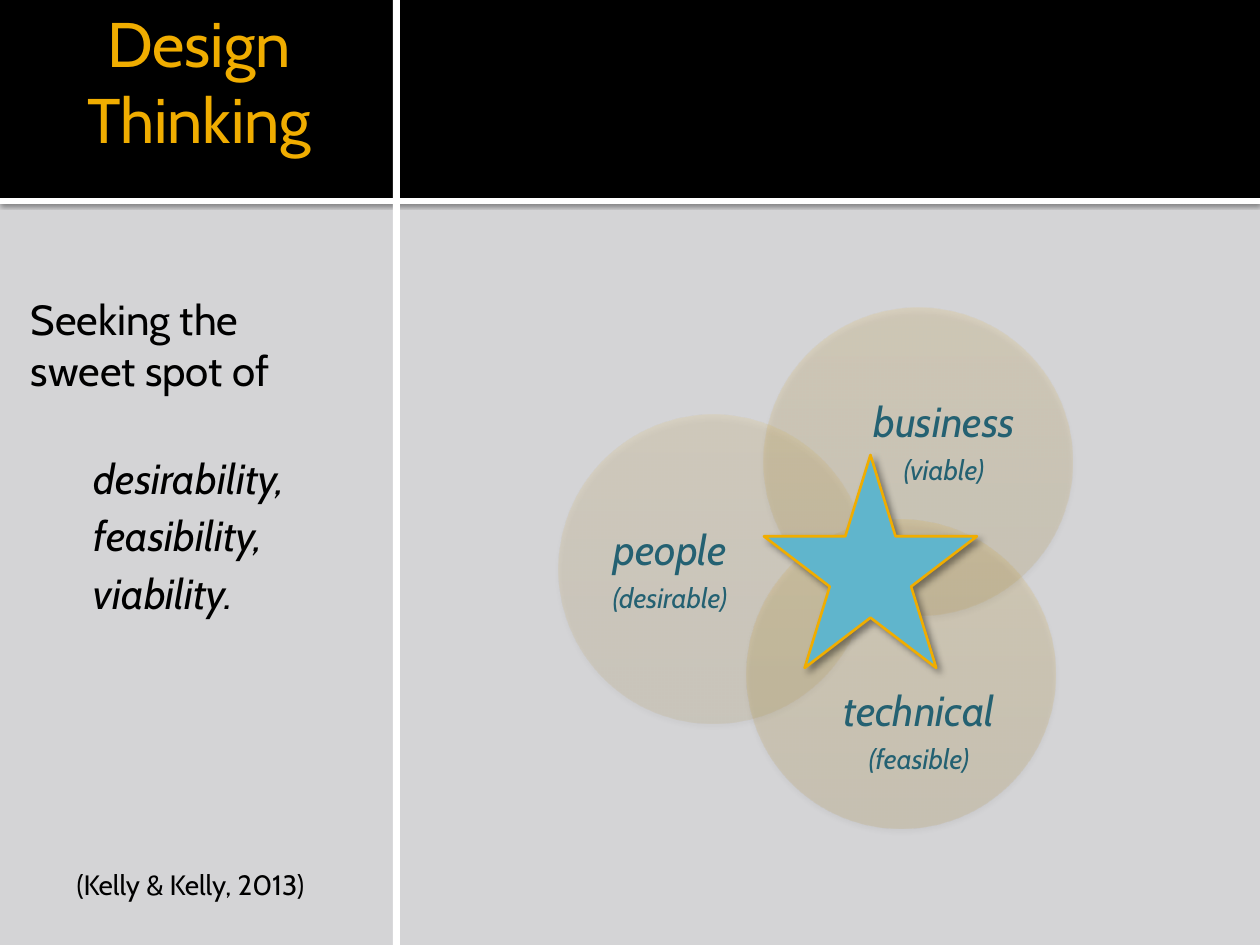
"""Build the Design Thinking slide with its three overlapping circles."""
from dataclasses import dataclass

from lxml.etree import SubElement
from pptx import Presentation
from pptx.dml.color import RGBColor
from pptx.enum.shapes import MSO_SHAPE as Shape
from pptx.enum.text import MSO_ANCHOR as Anchor, PP_ALIGN as Align
from pptx.oxml.ns import qn
from pptx.util import Emu, Pt

PX = 914400 // 126


@dataclass(frozen=True)
class Theme:
    font: str = "Cabin"
    background: str = "D4D4D6"
    black: str = "000000"
    white: str = "FFFFFF"
    gold: str = "F0AD00"
    blue: str = "60B5CC"
    teal: str = "246172"
    circle_stops: tuple = ((0, "AE7D00"), (55, "CC9300"), (100, "EEAB00"))
    title_size: int = 36
    main_size: int = 24
    small_size: int = 16


THEME = Theme()
SLIDE = (1260, 945)
DIAMETER = 308
LABEL_SIZE = (222, 113)

BANDS = [
    ((0, 198, 1260, 6), THEME.white, (60, 2.5, 0.8, 90)),
    ((0, 0, 1260, 198), THEME.black, None),
    ((393, 0, 7, 945), THEME.white, None),
]
CIRCLES = [
    {"at": (747, 520), "opacity": 12},
    {"at": (559, 415), "opacity": 9},
    {"at": (764, 308), "opacity": 11},
]
CIRCLE_SHADOW = (38, 3.1, 2, 90)
STAR = (764, 455, 213, 213)
STAR_SHADOW = (40, 4, 3, 45)
LABELS = [
    ("people", "(desirable)", (559, 507)),
    ("technical", "(feasible)", (808, 668)),
    ("business", "(viable)", (833, 379)),
]
TITLE = "Design Thinking"
INTRO = "Seeking the sweet spot of"
GOALS = ["desirability,", "feasibility,", "viability."]
CITATION = "(Kelly & Kelly, 2013)"


def px(*lengths):
    return [Emu(length * PX) for length in lengths]


def add_color(parent, color, opacity):
    node = SubElement(parent, qn("a:srgbClr"), val=color)
    SubElement(node, qn("a:alpha"), val=str(opacity * 1000))


def add_shadow(shape, opacity, blur, distance, angle):
    effects = shape._element.spPr.find(qn("a:effectLst"))
    shadow = SubElement(effects, qn("a:outerShdw"), blurRad=str(Pt(blur)),
                        dist=str(Pt(distance)), dir=str(angle * 60000),
                        algn="ctr", rotWithShape="0")
    add_color(shadow, THEME.black, opacity)


def add_figure(slide, kind, box, fill=None, line=None, shadow=None):
    shape = slide.shapes.add_shape(kind, *px(*box))
    shape.shadow.inherit = False
    if fill:
        shape.fill.solid()
        shape.fill.fore_color.rgb = RGBColor.from_string(fill)
    if line:
        shape.line.color.rgb = RGBColor.from_string(line)
        shape.line.width = Pt(1.5)
    else:
        shape.line.fill.background()
    if shadow:
        add_shadow(shape, *shadow)
    return shape


def add_circle(slide, at, opacity):
    circle = add_figure(slide, Shape.OVAL, (*at, DIAMETER, DIAMETER),
                        shadow=CIRCLE_SHADOW)
    circle.fill.gradient()
    circle.fill.gradient_angle = 90
    stops = circle._element.spPr.find(qn("a:gradFill")).find(qn("a:gsLst"))
    for stop in list(stops):
        stops.remove(stop)
    for position, color in THEME.circle_stops:
        stop = SubElement(stops, qn("a:gs"), pos=str(position * 1000))
        add_color(stop, color, opacity)


def add_frame(slide, box, insets=(13, 6, 13, 6), anchor=Anchor.TOP):
    frame = slide.shapes.add_textbox(*px(*box)).text_frame
    frame.word_wrap = True
    frame.vertical_anchor = anchor
    (frame.margin_left, frame.margin_top,
     frame.margin_right, frame.margin_bottom) = px(*insets)
    return frame


def add_text(frame, text, size=THEME.main_size, color=THEME.black, italic=False,
             align=Align.LEFT, before=0, spacing=1.0, indent=0):
    first = frame.paragraphs[0]
    paragraph = frame.add_paragraph() if first.runs else first
    paragraph.alignment = align
    paragraph.space_before = Pt(before)
    paragraph.line_spacing = spacing
    paragraph._p.get_or_add_pPr().set("marL", str(indent * PX))
    run = paragraph.add_run()
    run.text = text
    run.font.name = THEME.font
    run.font.size = Pt(size)
    run.font.italic = italic
    run.font.color.rgb = RGBColor.from_string(color)


def main():
    deck = Presentation()
    deck.slide_width, deck.slide_height = px(*SLIDE)
    slide = deck.slides.add_slide(deck.slide_layouts[6])
    slide.background.fill.solid()
    slide.background.fill.fore_color.rgb = RGBColor.from_string(THEME.background)

    for box, fill, shadow in BANDS:
        add_figure(slide, Shape.RECTANGLE, box, fill=fill, shadow=shadow)

    title = add_frame(slide, (23, 21, 348, 135), (10, 6, 6, 0), Anchor.BOTTOM)
    add_text(title, TITLE, size=THEME.title_size, color=THEME.gold,
             align=Align.CENTER)

    body = add_frame(slide, (23, 238, 340, 630), (8, 56, 13, 6))
    add_text(body, INTRO)
    for index, goal in enumerate(GOALS):
        add_text(body, goal, italic=True, indent=63, before=4 if index else 33)
    add_text(body, CITATION, size=THEME.small_size, align=Align.CENTER, before=143)

    for circle in CIRCLES:
        add_circle(slide, **circle)
    add_figure(slide, Shape.STAR_5_POINT, STAR, fill=THEME.blue,
               line=THEME.gold, shadow=STAR_SHADOW)
    for name, quality, at in LABELS:
        label = add_frame(slide, (*at, *LABEL_SIZE))
        for text, size in ((name, THEME.main_size), (quality, THEME.small_size)):
            add_text(label, text, size=size, color=THEME.teal, italic=True,
                     align=Align.CENTER, spacing=1.2)

    deck.save("out.pptx")


if __name__ == "__main__":
    main()
